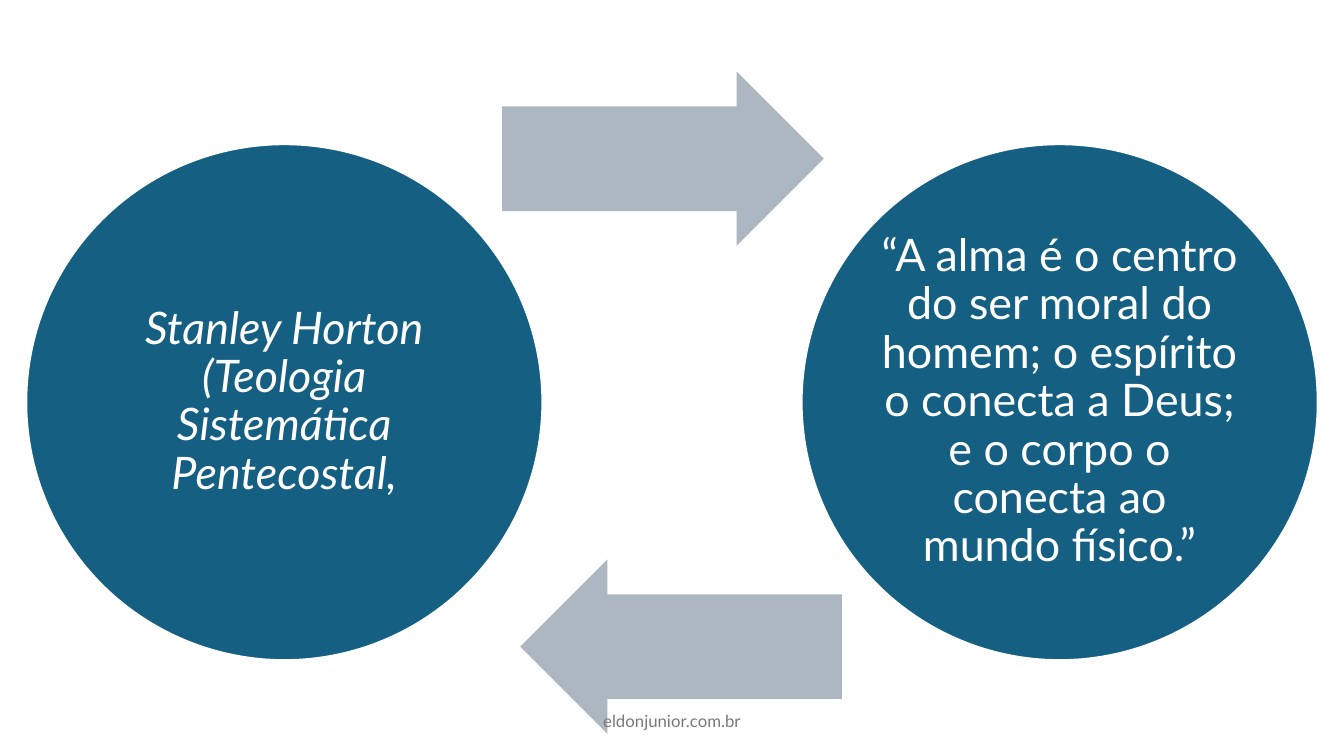
from dataclasses import dataclass

from pptx import Presentation
from pptx.dml.color import RGBColor
from pptx.enum.shapes import MSO_SHAPE
from pptx.enum.text import MSO_ANCHOR, PP_ALIGN
from pptx.util import Inches, Pt

CIRCLE = MSO_SHAPE.OVAL
ARROW = MSO_SHAPE.RIGHT_ARROW
CENTER = PP_ALIGN.CENTER
MIDDLE = MSO_ANCHOR.MIDDLE

# text, italic, left
CIRCLES = [
    ("Stanley Horton (Teologia Sistemática Pentecostal,", True, 0.26),
    ("“A alma é o centro do ser moral do homem; o espírito o conecta a Deus; "
     "e o corpo o conecta ao mundo físico.”", False, 7.95),
]
# left, top, rotation
ARROWS = [(4.98, 0.71, 0), (5.16, 5.55, 180)]
FOOTER = "eldonjunior.com.br"

SLIDE_WIDTH, SLIDE_HEIGHT = 13.33, 7.5
CIRCLE_TOP, DIAMETER = 1.43, 5.12
ARROW_WIDTH, ARROW_HEIGHT = 3.19, 1.73
FOOTER_TOP, FOOTER_WIDTH, FOOTER_HEIGHT = 6.95, 4.5, 0.4
CIRCLE_INSET = 0.04


@dataclass(frozen=True)
class Theme:
    font: str = "Lato"
    circle: RGBColor = RGBColor(0x15, 0x60, 0x82)
    arrow: RGBColor = RGBColor(0xAC, 0xB7, 0xC1)
    white: RGBColor = RGBColor(0xFF, 0xFF, 0xFF)
    footer: RGBColor = RGBColor(0x79, 0x79, 0x79)
    circle_size: int = 32
    footer_size: int = 12
    outline: float = 1.5


THEME = Theme()


def write_centered(shape, text, size, color, italic=False):
    text_frame = shape.text_frame
    text_frame.word_wrap = True
    text_frame.vertical_anchor = MIDDLE
    text_frame.text = text
    paragraph = text_frame.paragraphs[0]
    paragraph.alignment = CENTER
    font = paragraph.runs[0].font
    font.name = THEME.font
    font.size = Pt(size)
    font.color.rgb = color
    font.italic = italic


def add_filled_shape(slide, kind, left, top, width, height, color):
    shape = slide.shapes.add_shape(
        kind, Inches(left), Inches(top), Inches(width), Inches(height))
    shape.shadow.inherit = False
    shape.fill.solid()
    shape.fill.fore_color.rgb = color
    return shape


def add_circle(slide, text, italic, left):
    circle = add_filled_shape(
        slide, CIRCLE, left, CIRCLE_TOP, DIAMETER, DIAMETER, THEME.circle)
    circle.line.color.rgb = THEME.white
    circle.line.width = Pt(THEME.outline)
    write_centered(circle, text, THEME.circle_size, THEME.white, italic)
    text_frame = circle.text_frame
    text_frame.margin_left = text_frame.margin_right = Inches(CIRCLE_INSET)
    text_frame.margin_top = text_frame.margin_bottom = Inches(CIRCLE_INSET)
    text_frame.paragraphs[0].line_spacing = 0.9


def add_arrow(slide, left, top, rotation):
    arrow = add_filled_shape(
        slide, ARROW, left, top, ARROW_WIDTH, ARROW_HEIGHT, THEME.arrow)
    arrow.line.fill.background()
    arrow.adjustments[0] = 0.6
    arrow.adjustments[1] = 0.5
    arrow.rotation = rotation


def add_footer(slide):
    footer = slide.shapes.add_textbox(
        Inches((SLIDE_WIDTH - FOOTER_WIDTH) / 2), Inches(FOOTER_TOP),
        Inches(FOOTER_WIDTH), Inches(FOOTER_HEIGHT))
    write_centered(footer, FOOTER, THEME.footer_size, THEME.footer)


def main():
    presentation = Presentation()
    presentation.slide_width = Inches(SLIDE_WIDTH)
    presentation.slide_height = Inches(SLIDE_HEIGHT)
    blank_layout = presentation.slide_layouts[6]
    slide = presentation.slides.add_slide(blank_layout)
    for circle, arrow in zip(CIRCLES, ARROWS):
        add_circle(slide, *circle)
        add_arrow(slide, *arrow)
    add_footer(slide)
    presentation.save("out.pptx")


if __name__ == "__main__":
    main()
